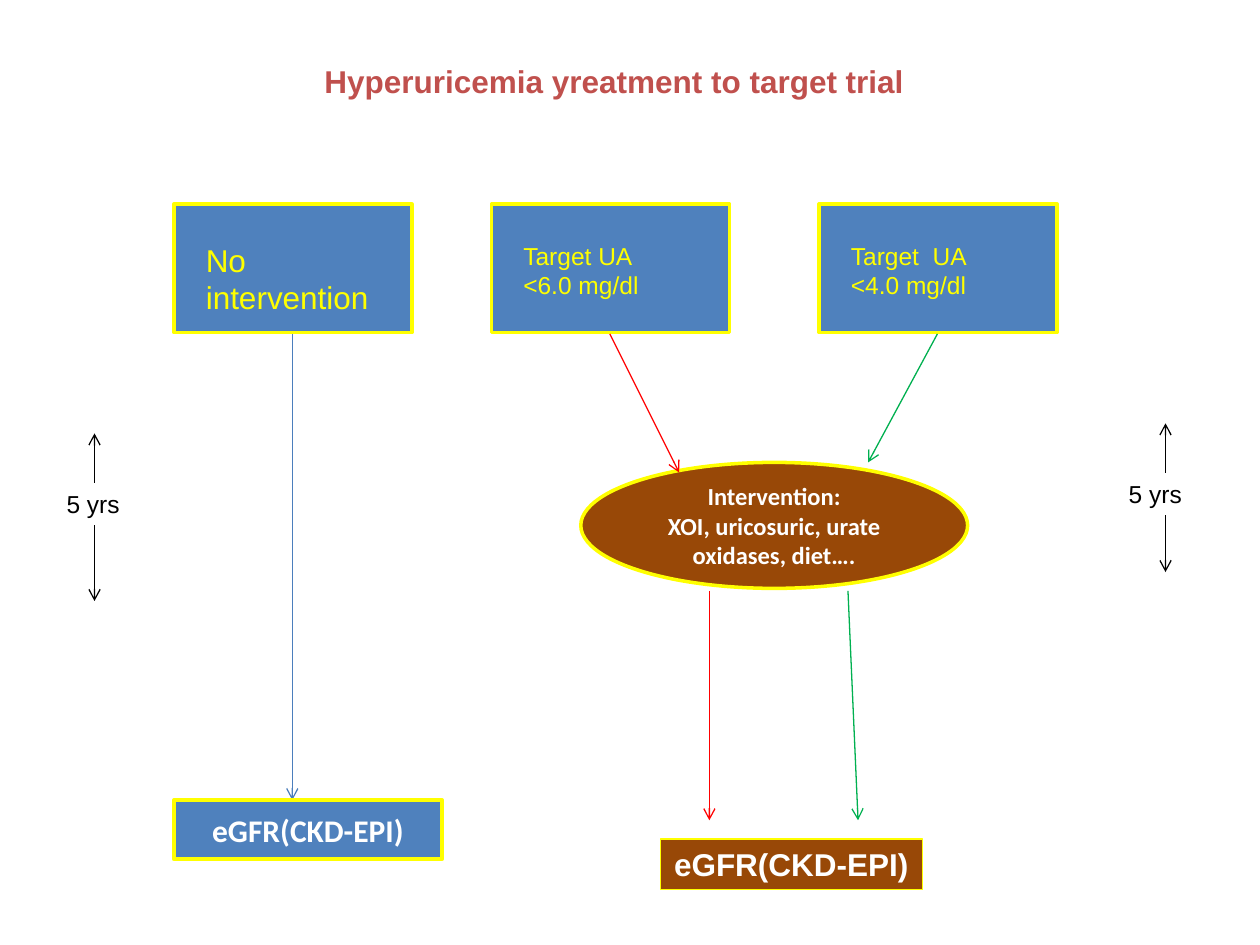
from lxml import etree
from pptx import Presentation, util as u
from pptx.dml.color import RGBColor
from pptx.enum import shapes, text
from pptx.oxml import ns

BLUE = RGBColor(0x4F, 0x81, 0xBD)
ARROW_BLUE = RGBColor(0x4B, 0x7E, 0xBC)
BROWN = RGBColor(0x98, 0x48, 0x07)
YELLOW = RGBColor(0xFF, 0xFF, 0x00)
RED = RGBColor(0xFF, 0x00, 0x00)
GREEN = RGBColor(0x00, 0xB0, 0x50)
BRICK = RGBColor(0xC0, 0x50, 0x4D)
WHITE = RGBColor(0xFF, 0xFF, 0xFF)
BLACK = RGBColor(0x00, 0x00, 0x00)

COLUMNS, ROWS = 100, 75
LEFT, CENTER = text.PP_ALIGN.LEFT, text.PP_ALIGN.CENTER
TOP, MIDDLE = text.MSO_ANCHOR.TOP, text.MSO_ANCHOR.MIDDLE

presentation = Presentation()
presentation.slide_width, presentation.slide_height = u.Inches(10), u.Inches(7.5)
CELL_WIDTH = presentation.slide_width / COLUMNS
CELL_HEIGHT = presentation.slide_height / ROWS


def to_emu(*lengths):
    """Turn alternating grid columns and rows into EMU."""
    return [round(length * (CELL_HEIGHT if index % 2 else CELL_WIDTH))
            for index, length in enumerate(lengths)]


def write(shape, lines, size, color, bold=False, font="Arial",
          align=LEFT, anchor=TOP, wrap=True):
    frame = shape.text_frame
    frame.text = "\n".join(lines)
    frame_format = {"word_wrap": wrap, "vertical_anchor": anchor,
                    "auto_size": text.MSO_AUTO_SIZE.NONE}
    for name, value in frame_format.items():
        setattr(frame, name, value)
    font_format = {"name": font, "size": u.Pt(size), "bold": bold}
    for paragraph in frame.paragraphs:
        paragraph.alignment = align
        for run in paragraph.runs:
            for name, value in font_format.items():
                setattr(run.font, name, value)
            run.font.color.rgb = color


def add_label(slide, box, lines, size, color, **style):
    write(slide.shapes.add_textbox(*to_emu(*box)), lines, size, color, **style)


def add_box(slide, kind, box, fill, line_width=2):
    shape = slide.shapes.add_shape(kind, *to_emu(*box))
    shape.shadow.inherit = False
    shape.fill.solid()
    shape.fill.fore_color.rgb = fill
    shape.line.color.rgb = YELLOW
    shape.line.width = u.Pt(line_width)
    return shape


def add_arrow(slide, start, end, color):
    connector = slide.shapes.add_connector(
        shapes.MSO_CONNECTOR.STRAIGHT, *to_emu(*start, *end))
    connector.line.color.rgb = color
    connector.line.width = u.Pt(0.75)
    etree.SubElement(connector.line._get_or_add_ln(), ns.qn("a:tailEnd"), type="arrow")
    etree.SubElement(connector._element.spPr, ns.qn("a:effectLst"))


def place_title(slide, box):
    title = slide.shapes.title
    title.left, title.top, title.width, title.height = to_emu(*box)
    write(title, ["Hyperuricemia yreatment to target trial"], 18, BRICK,
          bold=True, align=CENTER)


def place_group(slide, box, lines, size):
    """Draw a trial arm with its label inset."""
    left, top, width, height = box
    add_box(slide, shapes.MSO_SHAPE.RECTANGLE, box, BLUE)
    label = (left + 1.55, top + 2.4, width - 3.2, height - 3.1)
    add_label(slide, label, lines, size, YELLOW)


def place_intervention(slide, box):
    """Draw the treatment ellipse and the arrows into and out of it."""
    left, top, width, height = box
    ellipse = add_box(slide, shapes.MSO_SHAPE.OVAL, box, BROWN)
    write(ellipse, ["Intervention:", "XOI, uricosuric, urate oxidases, diet…."],
          14, WHITE, bold=True, font="Calibri", align=CENTER, anchor=MIDDLE)
    above, below, outcome = top - 10.2, top + height + 0.2, top + 28.4
    for start, end, color in (
        ((2.3, above), (7.8, top + 0.8), RED),
        ((28.3, above), (22.8, top), GREEN),
        ((10.2, below), (10.2, outcome), RED),
        ((21.2, below), (22, outcome), GREEN),
    ):
        add_arrow(slide, (left + start[0], start[1]), (left + end[0], end[1]), color)


def place_outcome(slide, box, fill, line_width, font, wrap):
    shape = add_box(slide, shapes.MSO_SHAPE.RECTANGLE, box, fill, line_width)
    write(shape, ["eGFR(CKD-EPI)"], 18, WHITE, bold=True, font=font,
          align=CENTER, anchor=MIDDLE, wrap=wrap)


def place_duration(slide, box, axis, drop):
    """Draw the follow-up time with an arrow up and an arrow down."""
    top, bottom = box[1], box[1] + box[3]
    add_label(slide, box, ["5 yrs"], 14, BLACK, wrap=False)
    add_arrow(slide, (axis, top), (axis, top - 3.9), BLACK)
    add_arrow(slide, (axis, bottom), (axis, bottom + drop), BLACK)


def build_slide():
    slide = presentation.slides.add_slide(presentation.slide_layouts[5])
    place_title(slide, (16.1, 4.4, 65.3, 4))
    for left, lines, size in (
        (13.8, ["No intervention"], 18),
        (39, ["Target UA", "<6.0 mg/dl"], 14),
        (65, ["Target  UA", "<4.0 mg/dl"], 14),
    ):
        place_group(slide, (left, 16.2, 18.9, 10.2), lines, size)
    place_intervention(slide, (46.1, 36.7, 30.7, 10))
    add_arrow(slide, (23.2, 26.5), (23.2, 63.5), ARROW_BLUE)
    place_duration(slide, (88.6, 37.5, 7.9, 3.4), 92.5, 4.5)
    place_duration(slide, (4.3, 38.3, 6.3, 3.4), 7.5, 6)
    place_outcome(slide, (13.8, 63.5, 21.3, 4.7), BLUE, 2, "Calibri", True)
    place_outcome(slide, (52.4, 66.6, 20.8, 4), BROWN, 0.75, "Arial", False)


if __name__ == "__main__":
    build_slide()
    presentation.save("out.pptx")
